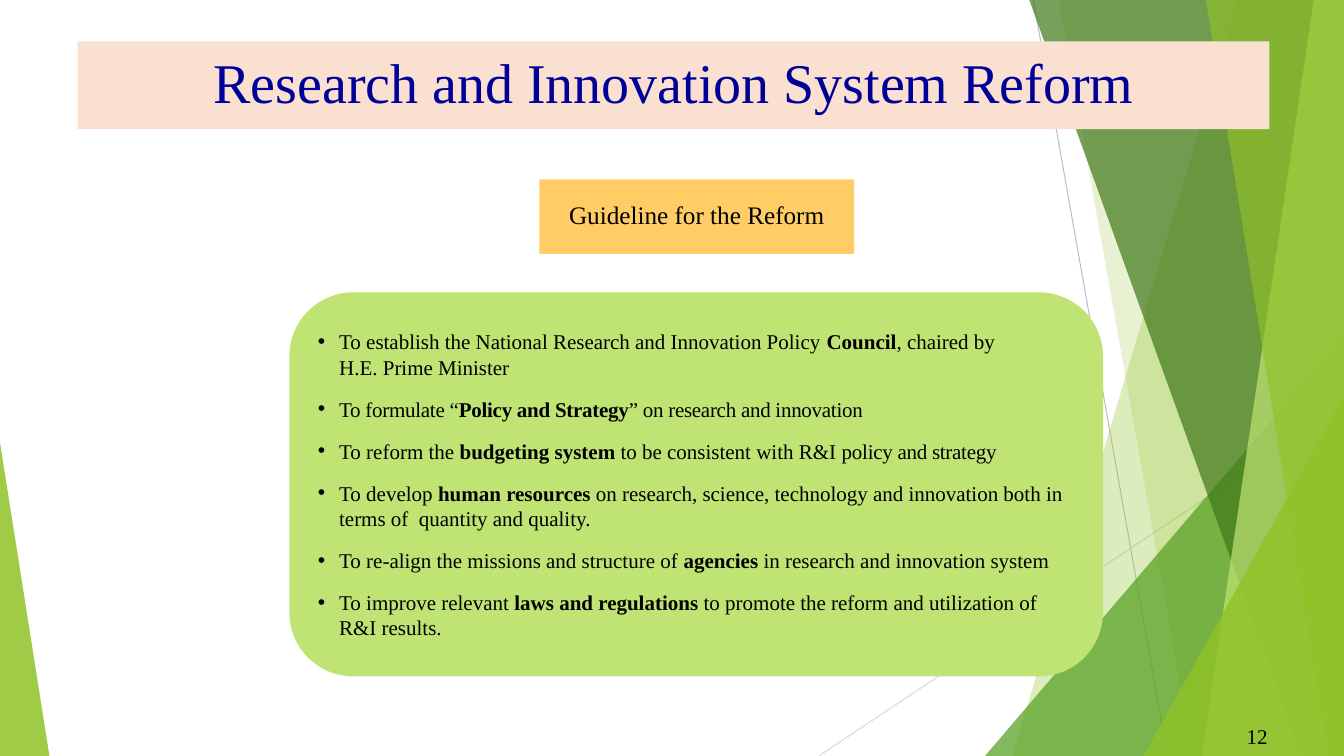
import pptx
import pptx.util
from lxml import etree
from pptx.dml.color import RGBColor
from pptx.enum.shapes import MSO_CONNECTOR, MSO_SHAPE
from pptx.enum.text import MSO_ANCHOR, MSO_AUTO_SIZE, PP_ALIGN
from pptx.oxml.ns import qn

WIDTH = pptx.util.Inches(13.33)
HEIGHT = pptx.util.Inches(7.5)
FONT = "Times New Roman"

BLACK = RGBColor(0x00, 0x00, 0x00)
NAVY = RGBColor(0x00, 0x00, 0x99)
PEACH = RGBColor(0xFA, 0xE0, 0xD1)
AMBER = RGBColor(0xFF, 0xCC, 0x66)
LIME = RGBColor(0xC0, 0xE4, 0x74)
GREEN = RGBColor(0x90, 0xC2, 0x26)
MID_GREEN = RGBColor(0x54, 0xA0, 0x21)
DARK_GREEN = RGBColor(0x3F, 0x78, 0x19)
GREY = RGBColor(0xBF, 0xBF, 0xBF)
LIGHT_GREY = RGBColor(0xD9, 0xD9, 0xD9)

# Each run is (text, style): b = bold, t = tight letter spacing
GUIDELINES = [
    [("To establish the National Research and Innovation Policy ", ""), ("Council", "b"),
     (", chaired by", ""), ("\n", ""), ("H.E. Prime Minister", "")],
    [("To formulate “", "t"), ("Policy and Strategy", "bt"),
     ("” on research and innovation", "t")],
    [("To reform the ", ""), ("budgeting system ", "b"),
     ("to be consistent with R&I ", ""), ("policy and strategy", "t")],
    [("To develop ", ""), ("human resources ", "b"),
     ("on research, science, technology and innovation both in terms of  quantity and quality.", "")],
    [("To re-align the missions and structure of ", ""), ("agencies", "b"),
     (" in research and innovation system", "")],
    [("To improve relevant ", ""), ("laws and regulations ", "b"),
     ("to promote the reform and utilization of R&I results.", "")],
]


def x(percent):
    return round(WIDTH * percent / 100)


def y(percent):
    return round(HEIGHT * percent / 100)


def box(left, top, width, height):
    """Turn percentages of the slide into a position and size."""
    return x(left), y(top), x(width), y(height)


def paint(sp, color, opacity=100):
    sp.shadow.inherit = False
    sp.fill.solid()
    sp.fill.fore_color.rgb = color
    sp.line.fill.background()
    if opacity < 100:
        clr = sp.fill._xPr.find(qn("a:solidFill"))[0]
        etree.SubElement(clr, qn("a:alpha")).set("val", str(opacity * 1000))


def add_thin_line(s, x1, y1, x2, y2, color):
    line = s.shapes.add_connector(MSO_CONNECTOR.STRAIGHT, x(x1), y(y1), x(x2), y(y2))
    line.line.color.rgb = color
    line.line.width = pptx.util.Pt(0.75)
    etree.SubElement(line._element.spPr, qn("a:effectLst"))


def add_band(s, top_x, bottom_x, color, opacity):
    """Fill from a slanted left edge to the right edge of the slide."""
    outline = s.shapes.build_freeform(x(top_x), 0)
    outline.add_line_segments([(WIDTH, 0), (WIDTH, HEIGHT), (x(bottom_x), HEIGHT)])
    paint(outline.convert_to_shape(), color, opacity)


def add_corner(s, left, top, width, apex, color, opacity):
    """Right triangle standing on the bottom edge of the slide."""
    sp = s.shapes.add_shape(MSO_SHAPE.ISOSCELES_TRIANGLE, *box(left, top, width, 100 - top))
    sp.adjustments[0] = apex
    paint(sp, color, opacity)


def add_backdrop(s):
    add_thin_line(s, 76.89, 0, 86.87, 100, GREY)
    add_thin_line(s, 100, 53.73, 60.92, 100, LIGHT_GREY)
    add_band(s, 92.12, 75.32, GREEN, 30)
    add_band(s, 78.77, 88.75, GREEN, 20)
    add_corner(s, 73.29, 44.4, 26.71, 1, MID_GREEN, 72)
    add_band(s, 76.59, 96.85, DARK_GREEN, 70)
    add_band(s, 97.75, 89.42, LIME, 70)
    add_band(s, 89.72, 98.87, GREEN, 65)
    add_corner(s, 85.07, 52.4, 14.93, 1, GREEN, 80)
    add_corner(s, 0, 58.53, 3.68, 0, GREEN, 85)


def style_paragraph(p, size, color=BLACK, align=PP_ALIGN.LEFT):
    p.alignment = align
    p.font.name = FONT
    p.font.size = pptx.util.Pt(size)
    p.font.color.rgb = color


def set_line(sp, text, size, color=BLACK, align=PP_ALIGN.CENTER, spacing=0.9):
    tf = sp.text_frame
    tf.text = text
    tf.word_wrap = True
    tf.auto_size = MSO_AUTO_SIZE.NONE
    tf.vertical_anchor = MSO_ANCHOR.MIDDLE
    p = tf.paragraphs[0]
    style_paragraph(p, size, color, align)
    p.line_spacing = spacing


def add_bullet(p):
    indent = pptx.util.Inches(0.21)
    pPr = p._p.get_or_add_pPr()
    pPr.set("marL", str(indent))
    pPr.set("indent", str(-indent))
    font = etree.Element(qn("a:buFont"), typeface="Arial")
    char = etree.Element(qn("a:buChar"), char="•")
    defaults = pPr.find(qn("a:defRPr"))
    defaults.addprevious(font)
    defaults.addprevious(char)


def add_guidelines(s):
    sp = s.shapes.add_shape(MSO_SHAPE.ROUNDED_RECTANGLE, *box(21.53, 38.67, 60.54, 50.8))
    paint(sp, LIME)
    tf = sp.text_frame
    tf.word_wrap = True
    tf.vertical_anchor = MSO_ANCHOR.MIDDLE
    for i, runs in enumerate(GUIDELINES):
        p = tf.add_paragraph() if i else tf.paragraphs[0]
        style_paragraph(p, 15)
        p.space_before = pptx.util.Pt(12)
        add_bullet(p)
        for text, style in runs:
            if text == "\n":
                p.add_line_break()
                continue
            r = p.add_run()
            r.text = text
            if "b" in style:
                r.font.bold = True
            if "t" in style:
                r._r.get_or_add_rPr().set("spc", "-20")


def add_title(s):
    title = s.shapes.title
    title.left, title.top, title.width, title.height = box(5.78, 5.47, 88.67, 11.6)
    title.fill.solid()
    title.fill.fore_color.rgb = PEACH
    set_line(title, "Research and Innovation System Reform", 40, NAVY)
    # Bring the title in front of the backdrop
    title.element.getparent().append(title.element)


def main():
    prs = pptx.Presentation()
    prs.slide_width, prs.slide_height = WIDTH, HEIGHT
    s = prs.slides.add_slide(prs.slide_layouts.get_by_name("Title Only"))

    add_backdrop(s)
    heading = s.shapes.add_shape(MSO_SHAPE.RECTANGLE, *box(40.14, 23.73, 23.41, 9.87))
    paint(heading, AMBER)
    set_line(heading, "Guideline for the Reform", 18)
    add_title(s)
    add_guidelines(s)
    number = s.shapes.add_textbox(*box(74.79, 94.67, 20.26, 5.33))
    set_line(number, "12", 15, align=PP_ALIGN.RIGHT, spacing=1.0)

    prs.save("out.pptx")


if __name__ == "__main__":
    main()
